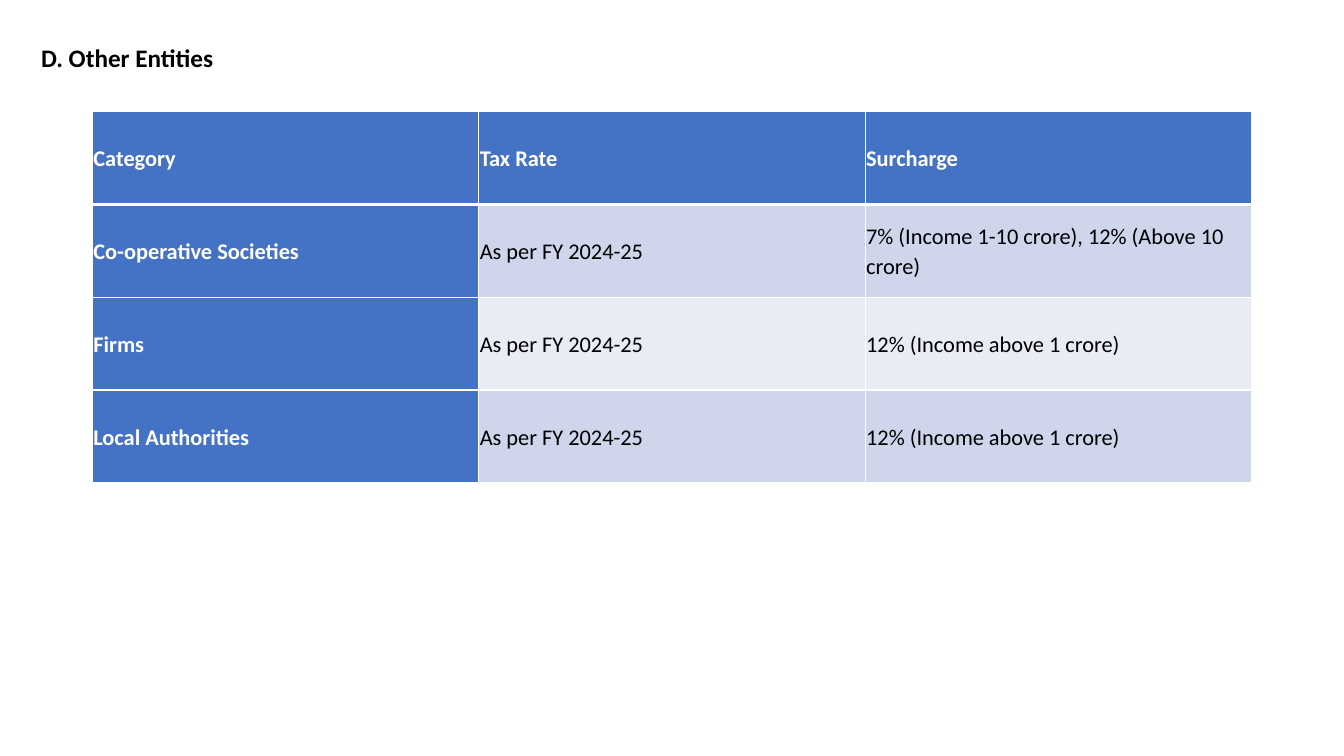
from dataclasses import dataclass

from lxml.etree import SubElement
from pptx import Presentation
from pptx.dml.color import RGBColor as RGB
from pptx.enum.text import MSO_ANCHOR as Anchor, MSO_AUTO_SIZE as AutoSize
from pptx.oxml.ns import qn
from pptx.util import Inches, Pt


@dataclass(frozen=True)
class Theme:
    font: str = "Calibri"
    title_size: int = 18
    table_size: int = 16
    ink: str = "000000"
    white: str = "FFFFFF"
    header: str = "4472C4"
    bands: tuple = ("E9EBF5", "CFD5EA")
    rule: int = 1
    header_rule: int = 3


class SlideBuilder:
    """Places styled elements on a slide using a grid of 160 columns by 90 rows."""

    def __init__(self, theme):
        self.theme = theme
        self.prs = Presentation()
        self.prs.slide_width, self.prs.slide_height = Inches(13.33), Inches(7.5)
        self.s = self.prs.slides.add_slide(self.prs.slide_layouts[6])

    def box(self, col, row, cols, rows):
        dx, dy = self.prs.slide_width / 160, self.prs.slide_height / 90
        return [round(n) for n in (col * dx, row * dy, cols * dx, rows * dy)]

    def add_text(self, tf, text, size, color, bold):
        p = tf.paragraphs[0]
        r = p.add_run()
        r.text = text
        for name, value in {"line_spacing": 1.07, "space_after": Pt(8)}.items():
            setattr(p, name, value)
        fmt = {"name": self.theme.font, "size": Pt(size), "bold": bold}
        for name, value in fmt.items():
            setattr(r.font, name, value)
        r.font.color.rgb = RGB.from_string(color)

    def title(self, text, *area):
        tf = self.s.shapes.add_textbox(*self.box(*area)).text_frame
        tf.word_wrap = True
        tf.auto_size = AutoSize.SHAPE_TO_FIT_TEXT
        self.add_text(tf, text, self.theme.title_size, self.theme.ink, True)

    def borders(self, cell, **widths):
        tc_pr = cell._tc.get_or_add_tcPr()
        for side, width in widths.items():
            ln = SubElement(tc_pr, qn(f"a:ln{side}"), w=str(Pt(width)))
            fill = SubElement(ln, qn("a:solidFill"))
            SubElement(fill, qn("a:srgbClr"), val=self.theme.white)

    def cell(self, cell, text, row, col):
        t = self.theme
        heading = row == 0 or col == 0
        self.borders(cell, L=t.rule, R=t.rule,
                     T=t.header_rule if row == 1 else t.rule,
                     B=t.header_rule if row == 0 else t.rule)
        cell.fill.solid()
        cell.fill.fore_color.rgb = RGB.from_string(t.header if heading else t.bands[row % 2])
        fmt = {"vertical_anchor": Anchor.MIDDLE}
        fmt.update({f"margin_{side}": Inches(0.01) for side in ("left", "right", "top", "bottom")})
        for name, value in fmt.items():
            setattr(cell, name, value)
        self.add_text(cell.text_frame, text, t.table_size, t.white if heading else t.ink, heading)

    def table(self, data, *area):
        frame = self.s.shapes.add_table(len(data), len(data[0]), *self.box(*area))
        frame.table.first_col = True
        for i, values in enumerate(data):
            for j, text in enumerate(values):
                self.cell(frame.table.cell(i, j), text, i, j)


def main():
    slide = SlideBuilder(Theme())
    slide.title("D. Other Entities", 3.7, 4.2, 80, 4.9)
    rate = "As per FY 2024-25"
    surcharge = "12% (Income above 1 crore)"
    slide.table([
        ("Category", "Tax Rate", "Surcharge"),
        ("Co-operative Societies", rate, "7% (Income 1-10 crore), 12% (Above 10 crore)"),
        ("Firms", rate, surcharge),
        ("Local Authorities", rate, surcharge),
    ], 11, 13.3, 138, 44.2)
    slide.prs.save("out.pptx")


if __name__ == "__main__":
    main()
